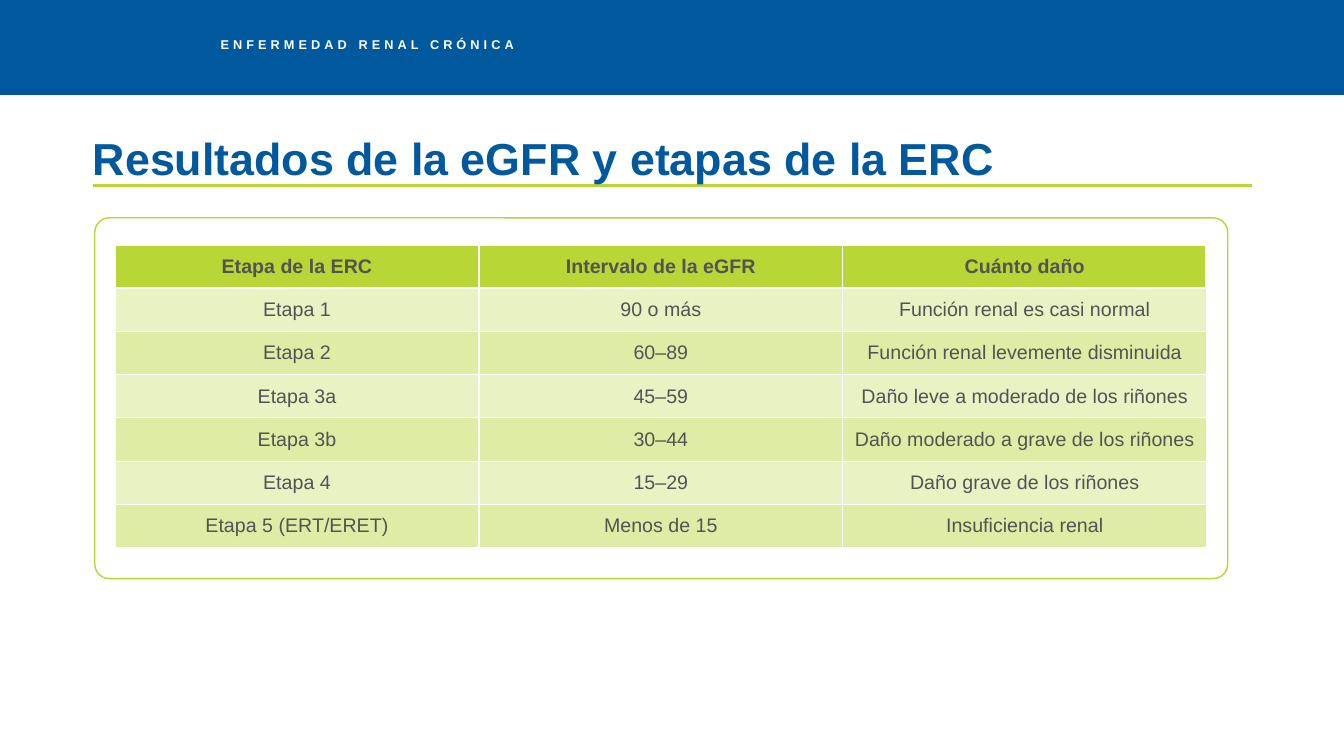
from lxml.etree import SubElement
from pptx import Presentation
from pptx.dml.color import RGBColor
from pptx.enum.shapes import MSO_CONNECTOR as CONN, MSO_SHAPE as SHAPE
from pptx.enum.text import MSO_ANCHOR as ANCHOR, PP_ALIGN as ALIGN
from pptx.oxml.ns import qn
from pptx.util import Cm, Pt

TOPIC = "ENFERMEDAD RENAL CRÓNICA"
TITLE = "Resultados de la eGFR y etapas de la ERC"
STAGES = [
    ("Etapa de la ERC", "Intervalo de la eGFR", "Cuánto daño"),
    ("Etapa 1", "90 o más", "Función renal es casi normal"),
    ("Etapa 2", "60–89", "Función renal levemente disminuida"),
    ("Etapa 3a", "45–59", "Daño leve a moderado de los riñones"),
    ("Etapa 3b", "30–44", "Daño moderado a grave de los riñones"),
    ("Etapa 4", "15–29", "Daño grave de los riñones"),
    ("Etapa 5 (ERT/ERET)", "Menos de 15", "Insuficiencia renal"),
]
COLORS = {"blue": "00599C", "lime": "B8D636", "white": "FFFFFF",
          "gray": "535353", "light": "E9F2C3", "mid": "DEECA5"}
FONT = "Arial"
WIDTH, HEIGHT = 33.87, 19.05
LEFT, CONTENT_W, RULE_Y = 2.34, 29.21, 4.67
COL_W, ROW_H = 9.17, 1.09


def rgb(name):
    return RGBColor.from_string(COLORS[name])


def add_run(p, text, size, color, bold):
    r = p.add_run()
    r.text = text
    r.font.name, r.font.size, r.font.bold = FONT, Pt(size), bold
    r.font.color.rgb = rgb(color)
    return r


def add_text(s, box, text, size, color, anchor):
    tf = s.shapes.add_textbox(*map(Cm, box)).text_frame
    tf.word_wrap = True
    tf.vertical_anchor = anchor
    tf.margin_left = tf.margin_right = tf.margin_top = tf.margin_bottom = 0
    p = tf.paragraphs[0]
    p.line_spacing = 0.9
    return add_run(p, text, size, color, True)


def add_box(s, kind, box, fill, line=None):
    sp = s.shapes.add_shape(kind, *map(Cm, box))
    sp.shadow.inherit = False
    sp.fill.solid()
    sp.fill.fore_color.rgb = rgb(fill)
    if line:
        sp.line.color.rgb = rgb(line)
        sp.line.width = Pt(1)
    else:
        sp.line.fill.background()
    return sp


def set_borders(cell, widths):
    tcPr = cell._tc.get_or_add_tcPr()
    for side, width in widths.items():
        ln = SubElement(tcPr, qn(f"a:ln{side}"), w=str(Pt(width)))
        fill = SubElement(ln, qn("a:solidFill"))
        SubElement(fill, qn("a:srgbClr"), val=COLORS["white"])


def add_stage_table(s):
    rows, cols = len(STAGES), len(STAGES[0])
    table = s.shapes.add_table(rows, cols, Cm(2.9), Cm(6.17),
                               Cm(COL_W * cols), Cm(ROW_H * rows)).table
    for col in table.columns:
        col.width = Cm(COL_W)
    for i, stage in enumerate(STAGES):
        table.rows[i].height = Cm(ROW_H)
        header = i == 0
        fill = "lime" if header else ("mid", "light")[i % 2]
        for j, text in enumerate(stage):
            cell = table.cell(i, j)
            set_borders(cell, {"L": 2 if header and j == 0 else 1,
                               "R": 2 if header and j == cols - 1 else 1,
                               "T": 2 if i < 2 else 1,
                               "B": 2 if header else 1})
            cell.fill.solid()
            cell.fill.fore_color.rgb = rgb(fill)
            cell.vertical_anchor = ANCHOR.MIDDLE
            cell.margin_left = cell.margin_right = Cm(0.13)
            cell.margin_top = cell.margin_bottom = Cm(0.13)
            p = cell.text_frame.paragraphs[0]
            p.alignment = ALIGN.CENTER
            add_run(p, text, 14, "gray", header)


def main():
    prs = Presentation()
    prs.slide_width, prs.slide_height = Cm(WIDTH), Cm(HEIGHT)
    s = prs.slides.add_slide(prs.slide_layouts[6])

    add_box(s, SHAPE.RECTANGLE, (0, 0, WIDTH, 2.39), "blue")
    rule = s.shapes.add_connector(CONN.STRAIGHT, Cm(LEFT), Cm(RULE_Y),
                                  Cm(LEFT + CONTENT_W), Cm(RULE_Y))
    rule.line.color.rgb = rgb("lime")
    rule.line.width = Pt(2)
    SubElement(rule._element.spPr, qn("a:effectLst"))

    r = add_text(s, (5.56, 0.97, 7.87, 0.61), TOPIC, 9.1, "white", ANCHOR.TOP)
    r._r.get_or_add_rPr().set("spc", "290")
    add_text(s, (LEFT, 2.87, CONTENT_W, 1.8), TITLE, 32, "blue", ANCHOR.BOTTOM)

    card = add_box(s, SHAPE.ROUNDED_RECTANGLE, (2.39, 5.49, 28.55, 9.09),
                   "white", "lime")
    card.adjustments[0] = 0.04
    add_stage_table(s)
    prs.save("out.pptx")


if __name__ == "__main__":
    main()
